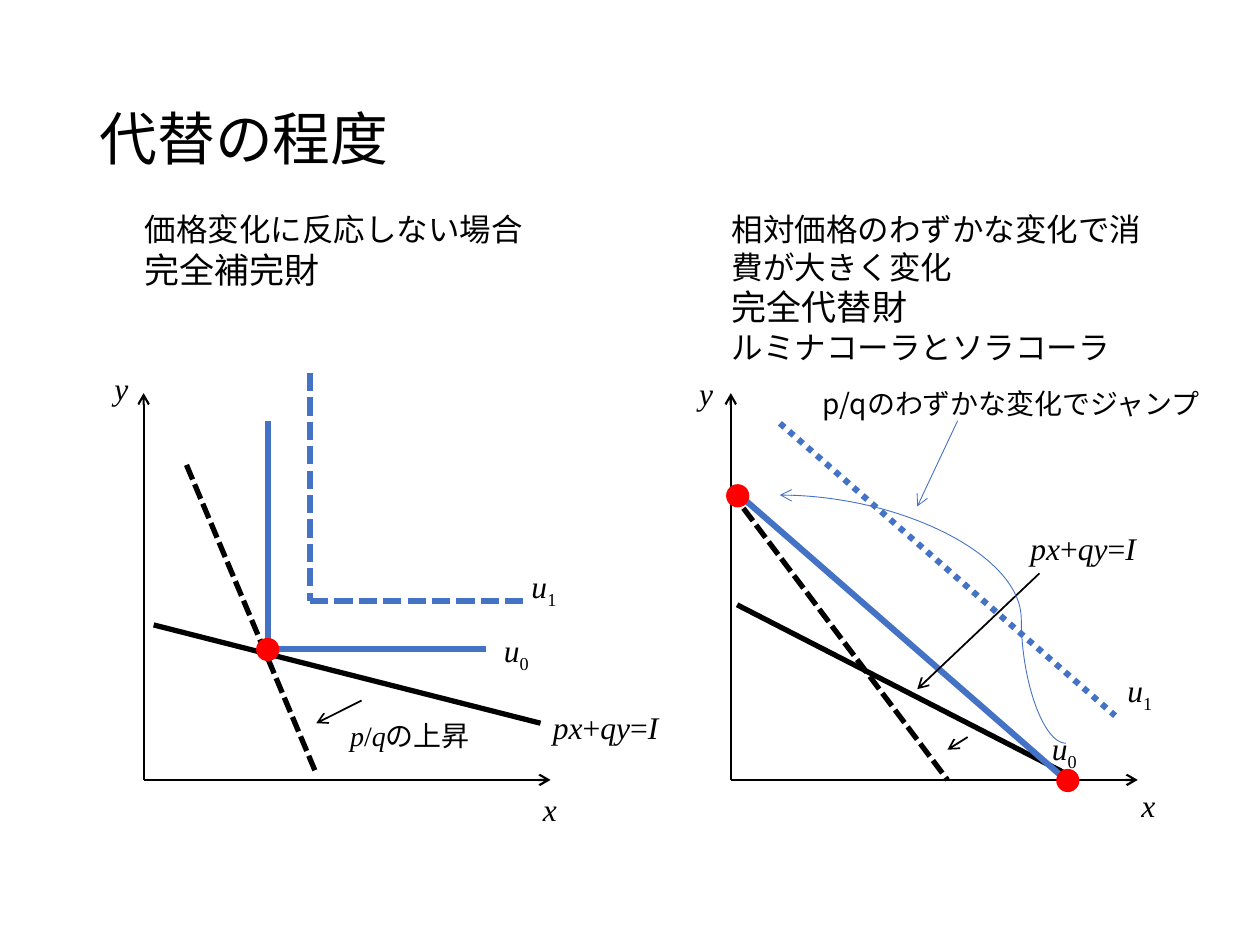
from dataclasses import dataclass

from lxml.etree import SubElement
from pptx import Presentation
from pptx.dml.color import RGBColor
from pptx.enum.dml import MSO_LINE
from pptx.enum.shapes import MSO_CONNECTOR, MSO_SHAPE
from pptx.enum.text import MSO_ANCHOR, MSO_AUTO_SIZE, PP_ALIGN
from pptx.oxml.ns import qn
from pptx.util import Inches, Pt


@dataclass(frozen=True)
class Theme:
    black: RGBColor = RGBColor(0x00, 0x00, 0x00)
    blue: RGBColor = RGBColor(0x44, 0x72, 0xC4)
    red: RGBColor = RGBColor(0xFF, 0x00, 0x00)
    japanese: str = "Noto Sans CJK JP"
    math: str = "Times New Roman"
    title: int = 33
    emphasis: int = 20
    body: int = 18
    note: int = 16


theme = Theme()


def add_line(shapes, start, end, color, width, dash=None, arrow=False, kind=MSO_CONNECTOR.STRAIGHT):
    line = shapes.add_connector(kind, *(Inches(value) for value in (*start, *end)))
    line.line.color.rgb = color
    line.line.width = Pt(width)
    if dash:
        line.line.dash_style = dash
    properties = line._element.spPr
    if arrow:
        SubElement(properties.find(qn("a:ln")), qn("a:tailEnd"), type="arrow")
    SubElement(properties, qn("a:effectLst"))
    return line


def add_text(shapes, box, paragraphs):
    """Each run is (text, size, style); style is "japanese", "italic", "upright" or "sub"."""
    shape = shapes.add_textbox(*(Inches(value) for value in box))
    frame = shape.text_frame
    frame.word_wrap = True
    frame.auto_size = MSO_AUTO_SIZE.SHAPE_TO_FIT_TEXT
    for index, runs in enumerate(paragraphs):
        paragraph = frame.add_paragraph() if index else frame.paragraphs[0]
        for text, size, style in runs:
            run = paragraph.add_run()
            run.text = text
            run.font.size = Pt(size)
            run.font.color.rgb = theme.black
            run.font.italic = style == "italic"
            run.font.name = theme.japanese if style == "japanese" else theme.math
            if style == "japanese":
                SubElement(run._r.rPr, qn("a:ea"), typeface=theme.japanese)
            if style == "sub":
                run._r.rPr.set("baseline", "-25000")


presentation = Presentation()
presentation.slide_width = Inches(10)
presentation.slide_height = Inches(7.5)
slide = presentation.slides.add_slide(presentation.slide_layouts[5])
shapes = slide.shapes

# Title
title = shapes.title
title.left, title.top, title.width, title.height = (Inches(value) for value in (0.69, 0.4, 8.62, 1.45))
title.text_frame.vertical_anchor = MSO_ANCHOR.MIDDLE
title.text_frame.auto_size = MSO_AUTO_SIZE.NONE
paragraph = title.text_frame.paragraphs[0]
paragraph.alignment = PP_ALIGN.LEFT
paragraph.line_spacing = 0.9
run = paragraph.add_run()
run.text = "代替の程度"
run.font.size = Pt(theme.title)
run.font.color.rgb = theme.black
run.font.name = theme.japanese
SubElement(run._r.rPr, qn("a:ea"), typeface=theme.japanese)

# Axes of both diagrams, with their letters
axis_y = 6.19
for origin_x, x_label, y_label in [
    (1.14, (4.21, 6.22), (0.81, 2.88)),
    (5.8, (8.96, 6.19), (5.45, 2.92)),
]:
    axes = shapes.add_group_shape().shapes
    for end in [(origin_x + 3.23, axis_y), (origin_x, 3.12)]:
        add_line(axes, (origin_x, axis_y), end, theme.black, 1.25, arrow=True)
    for letter, position in [("x", x_label), ("y", y_label)]:
        add_text(axes, (*position, 0.31, 0.4), [[(letter, theme.body, "italic")]])

# L-shaped indifference curves for perfect complements
for corner_x, corner_y, dash in [(2.13, 5.15, None), (2.46, 4.77, MSO_LINE.SQUARE_DOT)]:
    curve = shapes.add_group_shape().shapes
    corner = (corner_x, corner_y)
    add_line(curve, (corner_x, corner_y - 1.81), corner, theme.blue, 3.5, dash)
    add_line(curve, corner, (corner_x + 1.73, corner_y), theme.blue, 3.5, dash)

# Budget lines, and straight indifference curves for perfect substitutes
for start, end, color, width, dash in [
    ((1.22, 4.96), (4.29, 5.74), theme.black, 3, None),
    ((1.48, 3.69), (2.51, 6.14), theme.black, 3, MSO_LINE.SQUARE_DOT),
    ((5.8, 3.9), (7.52, 6.19), theme.black, 3, MSO_LINE.SQUARE_DOT),
    ((5.85, 4.8), (8.48, 6.15), theme.black, 3, None),
    ((5.8, 3.87), (8.46, 6.19), theme.blue, 3.5, None),
    ((6.19, 3.36), (8.85, 5.68), theme.blue, 3.5, MSO_LINE.ROUND_DOT),
]:
    add_line(shapes, start, end, color, width, dash)

# Utility labels
for left, top, level in [(3.9, 4.96, "0"), (4.12, 4.45, "1"), (8.25, 5.74, "0"), (8.85, 5.28, "1")]:
    add_text(shapes, (left, top, 0.47, 0.4), [[("u", theme.body, "italic"), (level, theme.body, "sub")]])

# Budget equations
equation = [("px", "italic"), ("+", "upright"), ("qy", "italic"), ("=", "upright"), ("I", "italic")]
for left, top in [(4.29, 5.57), (8.08, 4.15)]:
    add_text(shapes, (left, top, 1.18, 0.4), [[(text, theme.body, style) for text, style in equation]])

# Arrows for the price change and the notes
for start, end, color, width in [
    ((2.87, 5.56), (2.51, 5.74), theme.black, 1),
    ((7.68, 5.85), (7.52, 5.95), theme.black, 1),
    ((8.25, 4.55), (7.28, 5.47), theme.black, 1),
    ((7.6, 3.34), (7.28, 4.02), theme.blue, 0.5),
]:
    add_line(shapes, start, end, color, width, arrow=True)

# Chosen bundles
for left, top in [(2.04, 5.07), (8.39, 6.11), (5.77, 3.85)]:
    bundle = shapes.add_shape(MSO_SHAPE.OVAL, Inches(left), Inches(top), Inches(0.17), Inches(0.17))
    bundle.shadow.inherit = False
    bundle.fill.solid()
    bundle.fill.fore_color.rgb = theme.red
    bundle.line.color.rgb = theme.red
    bundle.line.width = Pt(1)

# Curved jump from one corner bundle to the other
jump = add_line(shapes, (8.46, 5.9), (6.19, 3.93), theme.blue, 0.5, arrow=True, kind=MSO_CONNECTOR.CURVE)
geometry = jump._element.spPr.find(qn("a:prstGeom"))
SubElement(geometry.find(qn("a:avLst")), qn("a:gd"), name="adj1", fmla="val 15600")

# Notes
add_text(shapes, (2.68, 5.65, 1.38, 0.37), [[
    ("p", theme.note, "italic"),
    ("/", theme.note, "upright"),
    ("q", theme.note, "italic"),
    ("の上昇", theme.note, "japanese"),
]])
add_text(shapes, (6.43, 3.02, 3.29, 0.37), [[("p/qのわずかな変化でジャンプ", theme.note, "japanese")]])

# Captions
add_text(shapes, (1.05, 1.62, 3.24, 1.04), [
    [("価格変化に反応しない場合", theme.body, "japanese")],
    [("完全補完財", theme.emphasis, "japanese")],
])
add_text(shapes, (5.71, 1.62, 3.55, 1.35), [
    [("相対価格のわずかな変化で消費が大きく変化", theme.body, "japanese")],
    [("完全代替財", theme.emphasis, "japanese")],
    [("ルミナコーラとソラコーラ", theme.body, "japanese")],
])

presentation.save("out.pptx")
